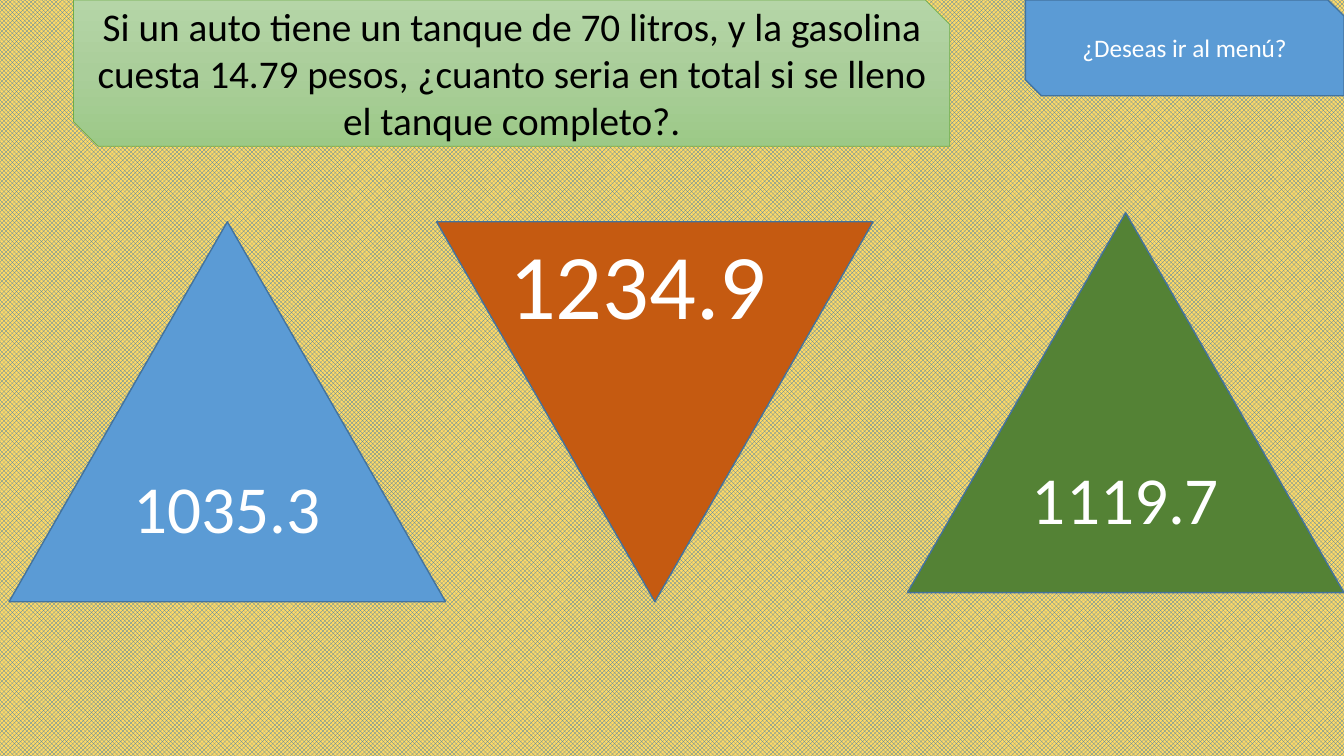
from copy import deepcopy

from pptx import Presentation
from pptx.dml.color import RGBColor
from pptx.enum.dml import MSO_PATTERN
from pptx.enum.shapes import MSO_SHAPE
from pptx.enum.text import MSO_ANCHOR, MSO_AUTO_SIZE, PP_ALIGN
from pptx.oxml.ns import qn
from pptx.util import Inches, Pt

TRIANGLE = MSO_SHAPE.ISOSCELES_TRIANGLE
SNIPPED = MSO_SHAPE.SNIP_2_DIAG_RECTANGLE
TRELLIS = MSO_PATTERN.TRELLIS
MIDDLE = MSO_ANCHOR.MIDDLE
CENTER, LEFT = PP_ALIGN.CENTER, PP_ALIGN.LEFT
GROW = MSO_AUTO_SIZE.SHAPE_TO_FIT_TEXT

WIDTH, HEIGHT = 13.33, 7.5
TRIANGLE_SIZE = (4.33, 3.77)
FONT = "Calibri"
COLORS = {
    "trellis": "2E75B6", "ground": "FFD966",
    "blue": "5B9BD5", "blue edge": "43739E",
    "orange": "C55A11", "green": "548235", "green edge": "70AD47",
    "black": "000000", "white": "FFFFFF",
}
QUESTION_GRADIENT = [(0, "B5D5A7"), (0.5, "AACE9A"), (1, "9CC987")]
QUESTION = ("Si un auto tiene un tanque de 70 litros, y la gasolina cuesta 14.79 pesos, "
            "¿cuanto seria en total si se lleno el tanque completo?.")


def color(name):
    return RGBColor.from_string(COLORS[name])


def write(box, text, size, ink="white", align=CENTER):
    box.text_frame.word_wrap = True
    para = box.text_frame.paragraphs[0]
    para.text = text
    para.alignment = align
    para.font.name = FONT
    para.font.size = Pt(size)
    para.font.color.rgb = color(ink)


def add_figure(page, kind, left, top, size, fill, edge="blue edge", edge_width=1):
    figure = page.shapes.add_shape(kind, *map(Inches, (left, top, *size)))
    figure.shadow.inherit = False
    figure.fill.solid()
    figure.fill.fore_color.rgb = color(fill)
    figure.line.color.rgb = color(edge)
    figure.line.width = Pt(edge_width)
    figure.text_frame.vertical_anchor = MIDDLE
    return figure


def shade_downwards(figure, stops):
    """Fill with a top-to-bottom gradient of three (position, colour) stops."""
    figure.fill.gradient()
    figure.fill.gradient_angle = 270
    stop_list = figure.element.spPr.find(qn("a:gradFill")).find(qn("a:gsLst"))
    stop_list.insert(1, deepcopy(stop_list[0]))
    for stop, (position, shade) in zip(figure.fill.gradient_stops, stops):
        stop.position = position
        stop.color.rgb = RGBColor.from_string(shade)


def paint_background(page):
    fill = page.background.fill
    fill.patterned()
    fill.pattern = TRELLIS
    fill.fore_color.rgb = color("trellis")
    fill.back_color.rgb = color("ground")


def add_question(page):
    panel = add_figure(page, SNIPPED, 0.73, 0, (8.69, 1.45), "green", "green edge", 0.5)
    shade_downwards(panel, QUESTION_GRADIENT)
    write(panel, QUESTION, 28, "black")


def add_answer(page, left, top, fill, text):
    write(add_figure(page, TRIANGLE, left, top, TRIANGLE_SIZE, fill), text, 48)


def add_inverted_answer(page, left, top, fill, text):
    """Keep the text in its own box, so that it stays upright."""
    add_figure(page, TRIANGLE, left, top, TRIANGLE_SIZE, fill).rotation = 180
    label = page.shapes.add_textbox(*map(Inches, (left + 0.62, top, 3.09, 1.21)))
    label.text_frame.auto_size = GROW
    write(label, text, 66, align=LEFT)


def add_menu_button(page):
    size = (3.16, 0.95)
    button = add_figure(page, SNIPPED, WIDTH - size[0], 0, size, "blue")
    write(button, "¿Deseas ir al menú?", 18)


def main():
    deck = Presentation()
    deck.slide_width, deck.slide_height = Inches(WIDTH), Inches(HEIGHT)
    page = deck.slides.add_slide(deck.slide_layouts[6])
    paint_background(page)
    add_question(page)
    add_answer(page, 0.09, 2.2, "blue", "1035.3")
    add_inverted_answer(page, 4.33, 2.2, "orange", "1234.9")
    add_answer(page, WIDTH - TRIANGLE_SIZE[0], 2.11, "green", "1119.7")
    add_menu_button(page)
    deck.save("out.pptx")


if __name__ == "__main__":
    main()
